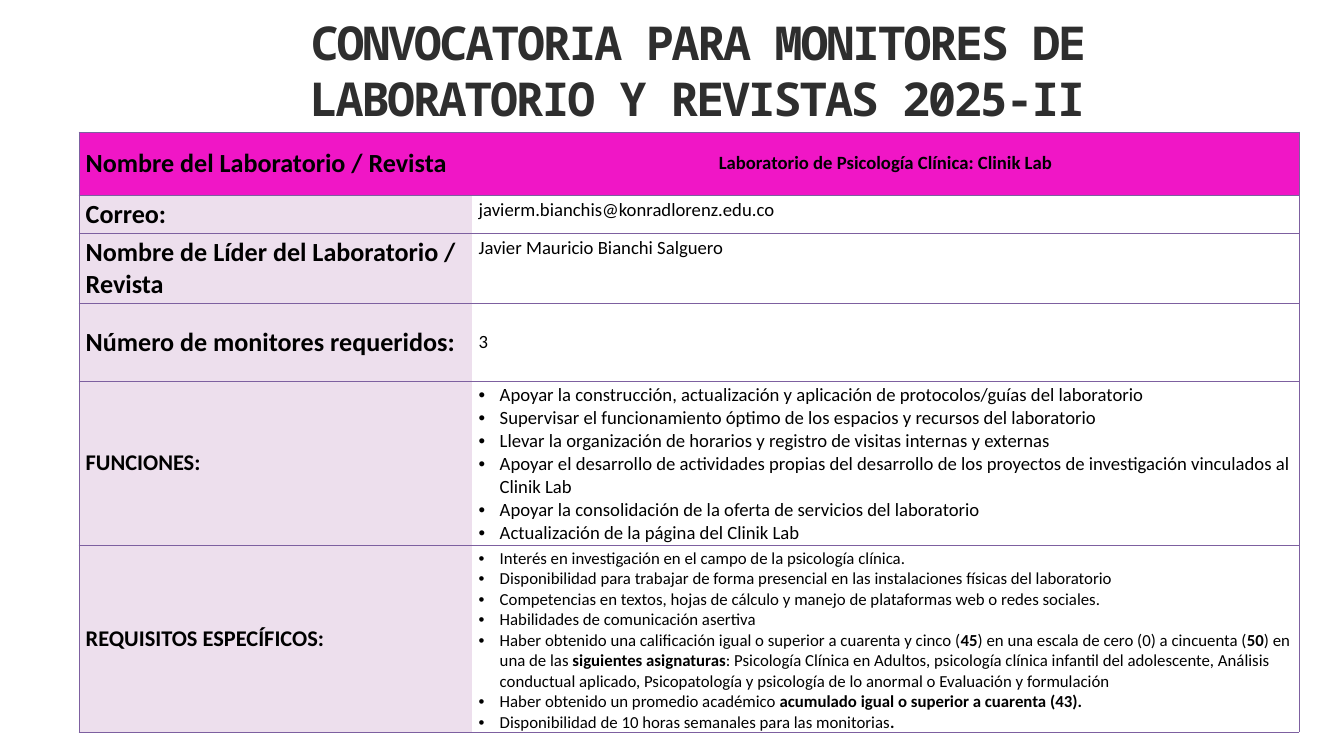
import pptx
import pptx.dml.color
import pptx.enum.text
import pptx.oxml
import pptx.oxml.ns
import pptx.util
from lxml import etree

PX = 914400 / 67.2
INK = pptx.dml.color.RGBColor(0x2E, 0x2E, 0x2E)
BLACK = pptx.dml.color.RGBColor(0, 0, 0)
MAGENTA = pptx.dml.color.RGBColor(0xF0, 0x16, 0xC6)
LILAC = pptx.dml.color.RGBColor(0xED, 0xDF, 0xED)
PURPLE = pptx.dml.color.RGBColor(0x7D, 0x60, 0xA0)
LEFT = pptx.enum.text.PP_ALIGN.LEFT
CENTER = pptx.enum.text.PP_ALIGN.CENTER
TOP = pptx.enum.text.MSO_ANCHOR.TOP
MIDDLE = pptx.enum.text.MSO_ANCHOR.MIDDLE


def px(length):
    return pptx.util.Emu(round(length * PX))


def write(frame, text, size=20, bold=False, color=BLACK, font="Calibri",
          align=LEFT, bullet=False, leading=None, tracking=None):
    for index, line in enumerate(text.split("\n")):
        paragraph = frame.add_paragraph() if index else frame.paragraphs[0]
        paragraph.alignment = align
        if leading:
            paragraph.line_spacing = pptx.util.Pt(leading)
        if bullet:
            properties = paragraph._p.get_or_add_pPr()
            properties.set("marL", str(px(21)))
            properties.set("indent", str(-px(21)))
            face = etree.SubElement(properties, pptx.oxml.ns.qn("a:buFont"))
            face.set("typeface", "Arial")
            mark = etree.SubElement(properties, pptx.oxml.ns.qn("a:buChar"))
            mark.set("char", "•")
        for part, words in enumerate(line.split("*")):
            if not words:
                continue
            run = paragraph.add_run()
            run.text = words
            run.font.size = pptx.util.Pt(size)
            run.font.bold = bold or part % 2 == 1
            run.font.name = font
            run.font.color.rgb = color
            if tracking:
                run._r.get_or_add_rPr().set("spc", str(round(tracking * 100)))


funciones = """Apoyar la construcción, actualización y aplicación de protocolos/guías del laboratorio
Supervisar el funcionamiento óptimo de los espacios y recursos del laboratorio
Llevar la organización de horarios y registro de visitas internas y externas
Apoyar el desarrollo de actividades propias del desarrollo de los proyectos de investigación vinculados al Clinik Lab
Apoyar la consolidación de la oferta de servicios del laboratorio
Actualización de la página del Clinik Lab"""

requisitos = """Interés en investigación en el campo de la psicología clínica.
Disponibilidad para trabajar de forma presencial en las instalaciones físicas del laboratorio
Competencias en textos, hojas de cálculo y manejo de plataformas web o redes sociales.
Habilidades de comunicación asertiva
Haber obtenido una calificación igual o superior a cuarenta y cinco (*45*) en una escala de cero (0) a cincuenta (*50*) en una de las *siguientes asignaturas*: Psicología Clínica en Adultos, psicología clínica infantil del adolescente, Análisis conductual aplicado, Psicopatología y psicología de lo anormal o Evaluación y formulación
Haber obtenido un promedio académico *acumulado igual o superior a cuarenta (43).*
Disponibilidad de 10 horas semanales para las monitorias*.*"""

convocatoria = [
    (63, "Nombre del Laboratorio / Revista", 28,
     "Laboratorio de Psicología Clínica: Clinik Lab", MIDDLE, {"bold": True, "align": CENTER}),
    (38, "Correo:", 28, "javierm.bianchis@konradlorenz.edu.co", TOP, {}),
    (70, "Nombre de Líder del Laboratorio / Revista", 28,
     "Javier Mauricio Bianchi Salguero", TOP, {}),
    (78, "Número de monitores requeridos:", 28, "3", MIDDLE, {}),
    (164, "FUNCIONES:", 24, funciones, TOP, {"bullet": True}),
    (187, "REQUISITOS ESPECÍFICOS:", 24, requisitos, TOP, {"bullet": True, "size": 18}),
]

presentation = pptx.Presentation()
presentation.slide_width = px(1344)
presentation.slide_height = px(756)
slide = presentation.slides.add_slide(presentation.slide_layouts[6])

heading = slide.shapes.add_textbox(px(212), px(14), px(971), px(113)).text_frame
heading.word_wrap = True
heading.margin_left = heading.margin_right = heading.margin_top = heading.margin_bottom = 0
write(heading, "CONVOCATORIA PARA MONITORES DE LABORATORIO Y REVISTAS 2025-II",
      size=50, bold=True, color=INK, font="Noto Sans Mono", align=CENTER,
      leading=60.1, tracking=-2.4)

ficha = slide.shapes.add_table(len(convocatoria), 2, px(79), px(132), px(1220), px(600)).table
ficha.first_row = False
ficha.horz_banding = False
ficha.columns[0].width = px(393)
ficha.columns[1].width = px(827)

for row, (height, label, label_size, detail, anchor, style) in enumerate(convocatoria):
    ficha.rows[row].height = px(height)
    label_cell, detail_cell = ficha.cell(row, 0), ficha.cell(row, 1)
    write(label_cell.text_frame, label, size=label_size, bold=True)
    write(detail_cell.text_frame, detail, **style)
    label_cell.vertical_anchor = MIDDLE
    detail_cell.vertical_anchor = anchor
    if style.get("bullet"):
        detail_cell.margin_top = px(3)
        detail_cell.margin_bottom = 0

    label_cell.fill.solid()
    label_cell.fill.fore_color.rgb = LILAC if row else MAGENTA
    if row:
        detail_cell.fill.background()
    else:
        detail_cell.fill.solid()
        detail_cell.fill.fore_color.rgb = MAGENTA

    for cell, inner_edge in ((label_cell, "R"), (detail_cell, "L")):
        for position, edge in enumerate("LRTB"):
            paint = "<a:noFill/>" if edge == inner_edge else (
                f'<a:solidFill><a:srgbClr val="{PURPLE}"/></a:solidFill>')
            cell._tc.get_or_add_tcPr().insert(position, pptx.oxml.parse_xml(
                f'<a:ln{edge} {pptx.oxml.ns.nsdecls("a")} w="9525">{paint}</a:ln{edge}>'))

presentation.save("out.pptx")
